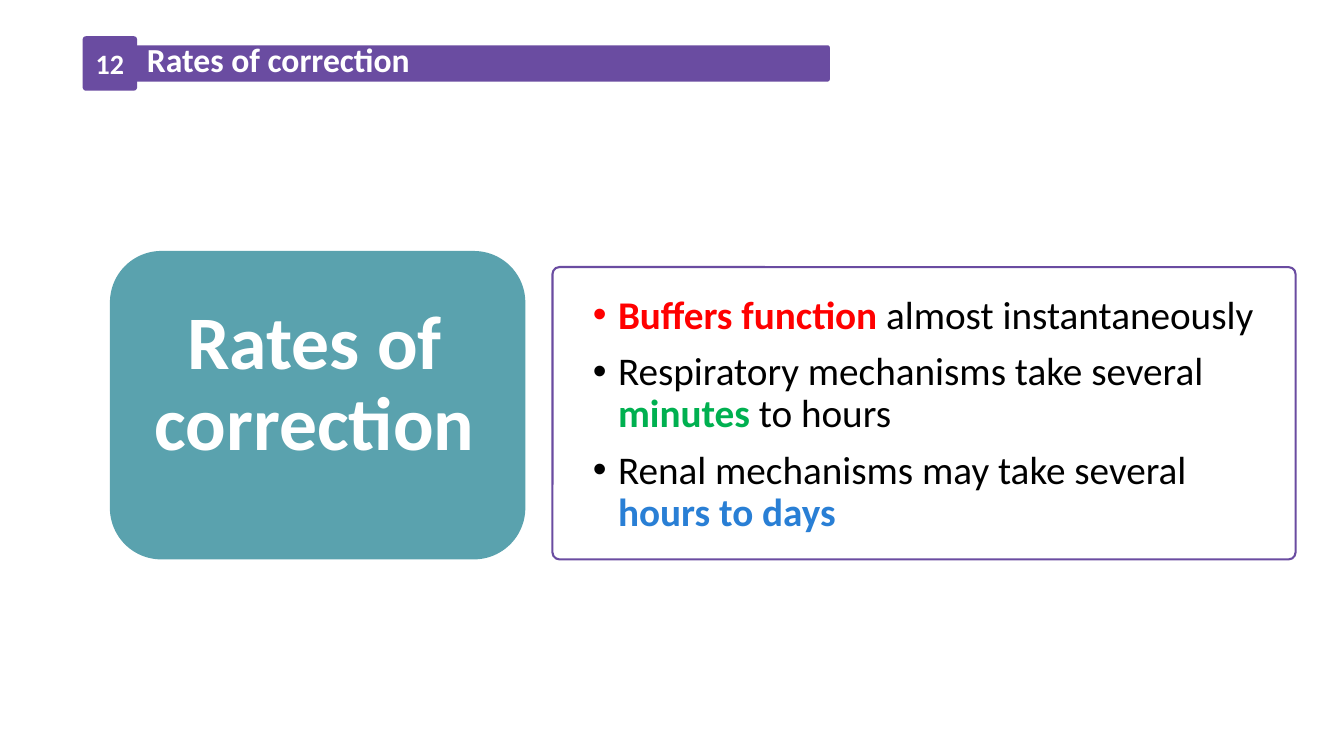
"""Build the slide on rates of correction."""
from lxml.etree import SubElement
from pptx import Presentation
from pptx.dml.color import RGBColor
from pptx.enum.shapes import MSO_SHAPE
from pptx.enum.text import MSO_ANCHOR, MSO_AUTO_SIZE, PP_ALIGN
from pptx.oxml.ns import qn
from pptx.util import Pt

PX = 9144
INK = {"purple": "6A4CA1", "teal": "5AA2AE", "white": "FFFFFF", "black": "000000",
       "red": "FF0000", "green": "00B050", "blue": "297FD5"}


def plate(box, fill, round, line=None):
    shape = slide.shapes.add_shape(MSO_SHAPE.ROUNDED_RECTANGLE, *[n * PX for n in box])
    shape.shadow.inherit = False
    shape.adjustments[0] = round
    shape.fill.solid()
    shape.fill.fore_color.rgb = RGBColor.from_string(INK[fill])
    if line:
        shape.line.color.rgb = RGBColor.from_string(INK[line])
        shape.line.width = Pt(1.5)
    else:
        shape.line.fill.background()
    return shape


def write(para, runs, size, **form):
    for name, value in form.items():
        setattr(para, name, value)
    for text, ink, bold in runs:
        run = para.add_run()
        run.text = text
        for name, value in {"name": "Calibri", "size": Pt(size), "bold": bold}.items():
            setattr(run.font, name, value)
        run.font.color.rgb = RGBColor.from_string(INK[ink])


deck = Presentation()
deck.slide_width, deck.slide_height = 1333 * PX, 750 * PX
slide = deck.slides.add_slide(deck.slide_layouts[1])
title, body = slide.placeholders
tree = slide.shapes.element

for shape, box, anchor in [(title, (136, 310, 352, 145), MSO_ANCHOR.MIDDLE),
                           (body, (578, 288, 690, 355), MSO_ANCHOR.TOP)]:
    for name, size in zip(("left", "top", "width", "height"), box):
        setattr(shape, name, size * PX)
    form = {"word_wrap": True, "auto_size": MSO_AUTO_SIZE.NONE, "vertical_anchor": anchor}
    for name, value in form.items():
        setattr(shape.text_frame, name, value)

plate((548, 265, 737, 290), "white", 0.024, "purple")
tree.append(body.element)
points = [
    [("Buffers function ", "red", True), ("almost instantaneously", "black", False)],
    [("Respiratory mechanisms take several ", "black", False),
     ("minutes ", "green", True), ("to hours", "black", False)],
    [("Renal mechanisms may take several ", "black", False), ("hours to days", "blue", True)],
]
frame = body.text_frame
for i, runs in enumerate(points):
    para = frame.add_paragraph() if i else frame.paragraphs[0]
    props = para._p.get_or_add_pPr()
    props.set("marL", str(25 * PX))
    props.set("indent", str(-25 * PX))
    SubElement(props, qn("a:buFont")).set("typeface", "Arial")
    SubElement(props, qn("a:buChar")).set("char", "•")
    write(para, runs, 28, line_spacing=0.9, space_before=Pt(10 if i else 0))

plate((109, 45, 714, 36), "purple", 0.06)
badge = plate((82, 36, 54, 54), "purple", 0.06).text_frame
badge.vertical_anchor = MSO_ANCHOR.MIDDLE
write(badge.paragraphs[0], [("12", "white", True)], 20, alignment=PP_ALIGN.CENTER)

topic = [("Rates of correction", "white", True)]
head = slide.shapes.add_textbox(*[n * PX for n in (136, 53, 597, 35)]).text_frame
head.word_wrap = True
head.auto_size = MSO_AUTO_SIZE.SHAPE_TO_FIT_TEXT
write(head.paragraphs[0], topic, 24, line_spacing=Pt(15.2), space_after=Pt(5))

plate((109, 249, 412, 306), "teal", 0.1667)
tree.append(title.element)
write(title.text_frame.paragraphs[0], topic, 54, alignment=PP_ALIGN.CENTER, line_spacing=0.9)

deck.save("out.pptx")
